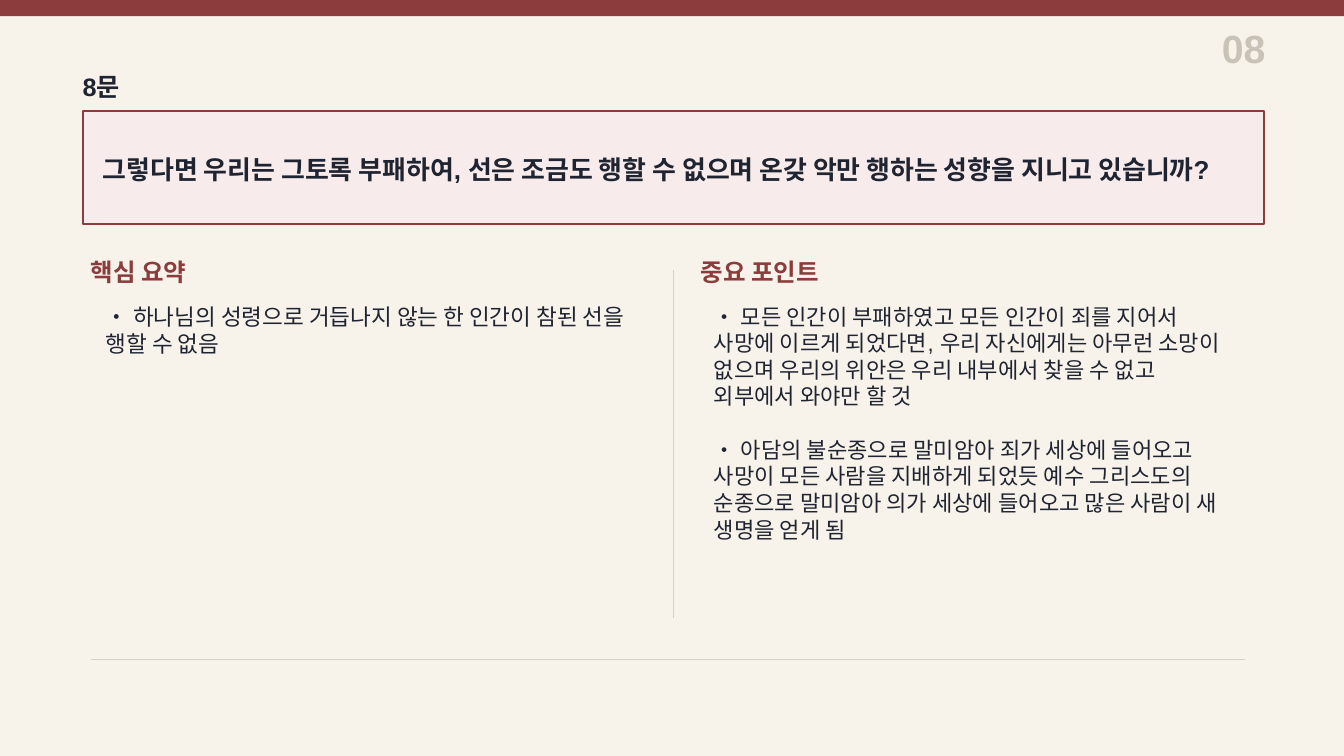
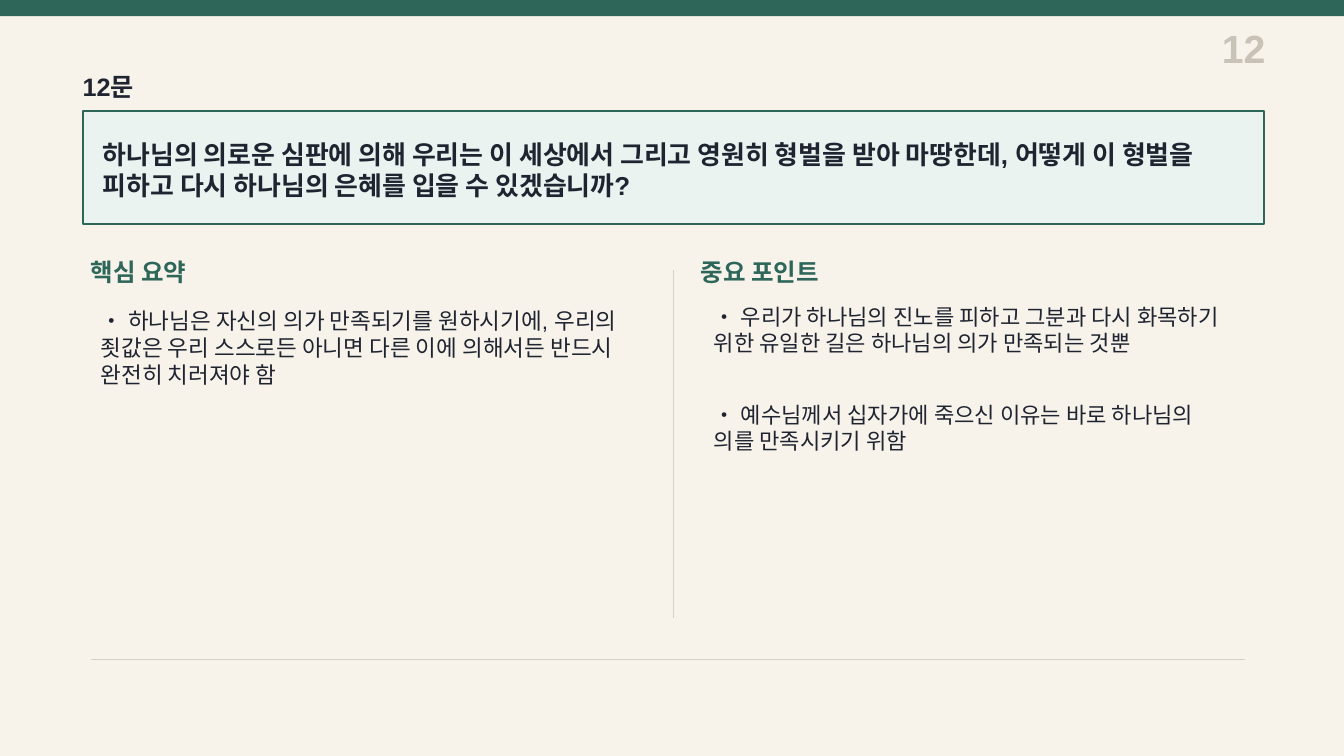
from lxml import etree
from pptx import Presentation
from pptx.dml.color import RGBColor
from pptx.enum.shapes import MSO_CONNECTOR, MSO_SHAPE
from pptx.enum.text import MSO_ANCHOR, MSO_AUTO_SIZE, PP_ALIGN
from pptx.oxml.ns import qn
from pptx.util import Inches, Pt

LEFT, RIGHT = PP_ALIGN.LEFT, PP_ALIGN.RIGHT
TOP, MIDDLE = MSO_ANCHOR.TOP, MSO_ANCHOR.MIDDLE
NO_FIT = MSO_AUTO_SIZE.NONE
RECT = MSO_SHAPE.RECTANGLE
STRAIGHT = MSO_CONNECTOR.STRAIGHT

FONT = "Arial"
NONE = (0, 0, 0, 0)
BODY = (0.1, 0.05, 0.1, 0.05)
HUE = {
    "paper": "F7F3EB",
    "ink": "1F2430",
    "page": "C9C2B7",
    "rule": "D8D0C2",
    "red": "8C3C3C",
    "rose": "F7ECEB",
    "green": "2E665A",
    "mint": "EAF3F0",
}
RGB = {name: RGBColor.from_string(code) for name, code in HUE.items()}

HEADS = [("핵심 요약", 0.9, 2.4), ("중요 포인트", 6.95, 3)]
RULES = [(6.68, 2.68, 6.68, 6.13), (0.9, 6.54, 12.35, 6.54)]

DECK = [
    {
        "num": 8, "main": "red", "tint": "rose",
        "ask": "그렇다면 우리는 그토록 부패하여, 선은 조금도 행할 수 없으며 "
               "온갖 악만 행하는 성향을 지니고 있습니까?",
        "notes": [
            (0.95, 2.96, 0.84, 16.1,
             "하나님의 성령으로 거듭나지 않는 한 인간이 참된 선을 행할 수 없음"),
            (6.98, 2.96, 1.12, 15.8,
             "모든 인간이 부패하였고 모든 인간이 죄를 지어서 사망에 이르게 되었다면, "
             "우리 자신에게는 아무런 소망이 없으며 우리의 위안은 우리 내부에서 "
             "찾을 수 없고 외부에서 와야만 할 것"),
            (6.98, 4.28, 1.12, 15.8,
             "아담의 불순종으로 말미암아 죄가 세상에 들어오고 사망이 모든 사람을 "
             "지배하게 되었듯 예수 그리스도의 순종으로 말미암아 의가 세상에 "
             "들어오고 많은 사람이 새 생명을 얻게 됨"),
        ],
    },
    {
        "num": 12, "main": "green", "tint": "mint",
        "ask": "하나님의 의로운 심판에 의해 우리는 이 세상에서 그리고 영원히 형벌을 "
               "받아 마땅한데, 어떻게 이 형벌을 피하고 다시 하나님의 은혜를 입을 수 "
               "있겠습니까?",
        "notes": [
            (0.9, 3, 0.93, 16.1,
             "하나님은 자신의 의가 만족되기를 원하시기에, 우리의 죗값은 우리 "
             "스스로든 아니면 다른 이에 의해서든 반드시 완전히 치러져야 함"),
            (6.98, 2.96, 1.12, 15.8,
             "우리가 하나님의 진노를 피하고 그분과 다시 화목하기 위한 유일한 길은 "
             "하나님의 의가 만족되는 것뿐"),
            (6.98, 3.93, 1.12, 15.8,
             "예수님께서 십자가에 죽으신 이유는 바로 하나님의 의를 만족시키기 위함"),
        ],
    },
]


def write(shape, text, size, hue="ink", bold=True, align=LEFT, anchor=MIDDLE, pad=NONE):
    frame = shape.text_frame
    frame.word_wrap = True
    frame.auto_size = NO_FIT
    frame.vertical_anchor = anchor
    frame.margin_left, frame.margin_top, frame.margin_right, frame.margin_bottom = map(Inches, pad)
    par = frame.paragraphs[0]
    par.alignment = align
    run = par.add_run()
    run.text = text
    run.font.name = FONT
    run.font.size = Pt(size)
    run.font.bold = bold
    run.font.color.rgb = RGB[hue]


def label(slide, box, text, size, **style):
    write(slide.shapes.add_textbox(*map(Inches, box)), text, size, **style)


prs = Presentation()
prs.slide_width = Inches(13.33)
prs.slide_height = Inches(7.5)
back = prs.slide_master.background.fill
back.solid()
back.fore_color.rgb = RGB["paper"]
layout = prs.slide_layouts.get_by_name("Title Only")

for item in DECK:
    slide = prs.slides.add_slide(layout)
    main = item["main"]

    title = slide.shapes.title
    title.left, title.top = Inches(0.82), Inches(1.1)
    title.width, title.height = Inches(11.72), Inches(1.12)
    title.fill.solid()
    title.fill.fore_color.rgb = RGB[item["tint"]]
    title.line.color.rgb = RGB[main]
    title.line.width = Pt(1.2)
    write(title, item["ask"], 18.5, pad=(0.2, 0.24, 0.24, 0.2))

    band = slide.shapes.add_shape(RECT, 0, 0, prs.slide_width, Inches(0.16))
    band.shadow.inherit = False
    band.fill.solid()
    band.fill.fore_color.rgb = RGB[main]
    band.line.fill.background()

    label(slide, (11.55, 0.22, 1, 0.5), f"{item['num']:02}", 28, hue="page", align=RIGHT)
    label(slide, (0.82, 0.72, 0.9, 0.28), f"{item['num']}문", 18)

    for text, left, width in HEADS:
        label(slide, (left, 2.58, width, 0.24), text, 17.5, hue=main)

    for left, top, height, size, text in item["notes"]:
        label(slide, (left, top, 5.38, height), "• " + text, size,
              bold=False, anchor=TOP, pad=BODY)

    for ends in RULES:
        rule = slide.shapes.add_connector(STRAIGHT, *map(Inches, ends))
        rule.line.color.rgb = RGB["rule"]
        rule.line.width = Pt(1)
        etree.SubElement(rule._element.spPr, qn("a:effectLst"))

prs.save("out.pptx")
